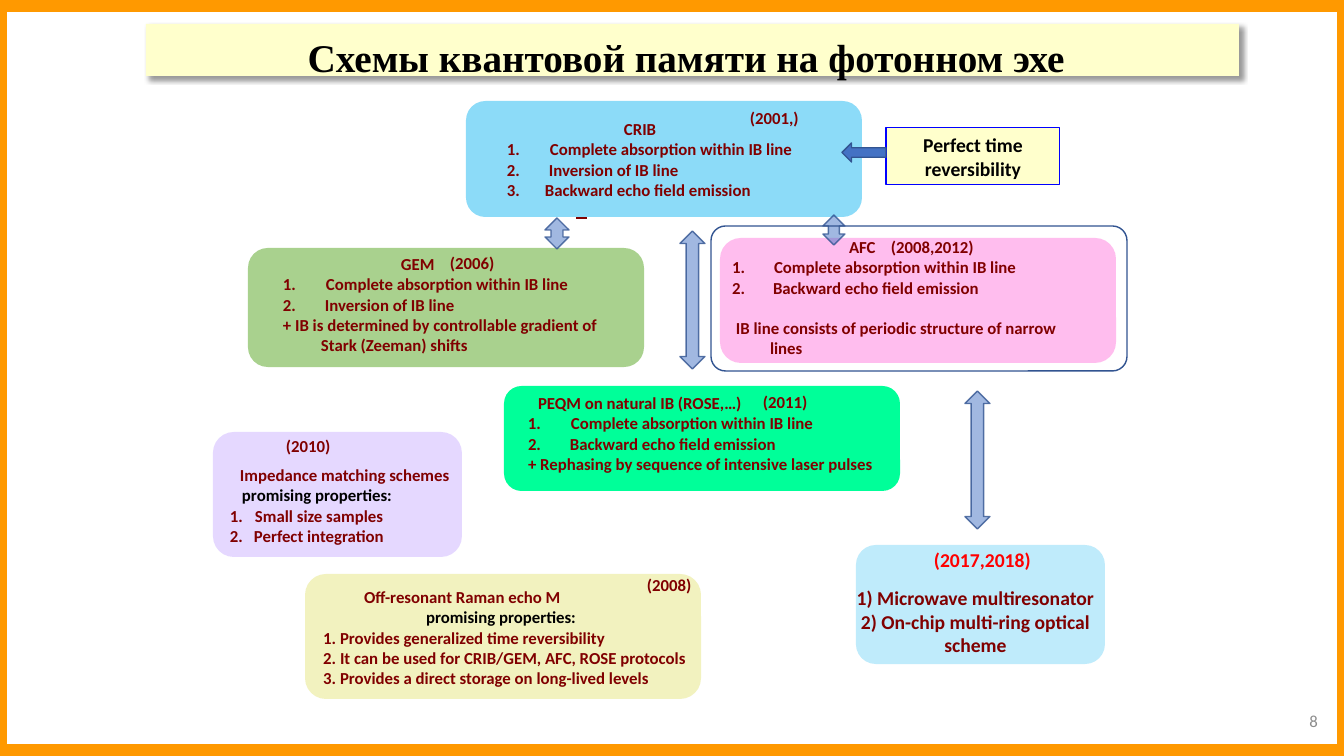
from dataclasses import dataclass

from lxml import etree
from pptx import Presentation
from pptx.dml.color import RGBColor
from pptx.enum.shapes import MSO_CONNECTOR, MSO_SHAPE
from pptx.enum.text import MSO_ANCHOR, PP_ALIGN
from pptx.oxml.ns import qn
from pptx.util import Pt

ROUND, RECT = MSO_SHAPE.ROUNDED_RECTANGLE, MSO_SHAPE.RECTANGLE
UP_DOWN, LEFT_ARROW = MSO_SHAPE.UP_DOWN_ARROW, MSO_SHAPE.LEFT_ARROW
TOP, MIDDLE = MSO_ANCHOR.TOP, MSO_ANCHOR.MIDDLE
LEFT, CENTER, RIGHT = PP_ALIGN.LEFT, PP_ALIGN.CENTER, PP_ALIGN.RIGHT
EMU_PER_PX = 914400 / 100.8


@dataclass(frozen=True)
class Theme:
    body_font: str = "Calibri"
    title_font: str = "Times New Roman"
    body: int = 12
    large: int = 14
    title: int = 28
    maroon: str = "800000"
    black: str = "000000"
    red: str = "FF0000"
    gray: str = "8C8C8C"
    cream: str = "FFFFCC"
    orange: str = "FF9900"
    blue: str = "4472C4"
    navy: str = "325491"
    bright_blue: str = "0000FF"


THEME = Theme()


@dataclass(frozen=True)
class Line:
    text: str
    left: int = 0             # where wrapped text starts, px from the box
    first: int | None = None  # where the first line or its number starts
    numbered: bool = False
    color: str = THEME.maroon
    size: int = THEME.body
    font: str = THEME.body_font
    bold: bool = True
    align: PP_ALIGN = LEFT
    gap: float = 0            # space before, points


def px(length):
    return round(length * EMU_PER_PX)


def apply(target, formats):
    for name, value in formats.items():
        setattr(target, name, value)


def paint(fill, color, opacity, holder):
    """Fill with a colour; holder is the XML element that carries the fill."""
    if color is None:
        fill.background()
        return
    fill.solid()
    fill.fore_color.rgb = RGBColor.from_string(color)
    if opacity < 100:
        swatch = holder.find(qn("a:solidFill")).find(qn("a:srgbClr"))
        etree.SubElement(swatch, qn("a:alpha"), val=str(opacity * 1000))


def add_shape(page, kind, box, fill=None, opacity=100, line=None, width=1, line_opacity=100):
    shape = page.shapes.add_shape(kind, *map(px, box))
    shape.shadow.inherit = False
    shape.line.width = Pt(width)
    properties = shape._element.spPr
    paint(shape.fill, fill, opacity, properties)
    paint(shape.line.fill, line, line_opacity, properties.find(qn("a:ln")))
    return shape


def write(shape, lines, anchor=TOP, inset=0):
    frame = shape.text_frame
    apply(frame, {"word_wrap": True, "vertical_anchor": anchor,
                  "margin_left": px(inset), "margin_right": px(inset),
                  "margin_top": px(inset), "margin_bottom": px(inset)})
    for index, line in enumerate(lines):
        para = frame.add_paragraph() if index else frame.paragraphs[0]
        apply(para, {"alignment": line.align, "space_before": Pt(line.gap)})
        first = line.left if line.first is None else line.first
        settings = para._p.get_or_add_pPr()
        settings.set("marL", str(px(line.left)))
        settings.set("indent", str(px(first - line.left)))
        if line.numbered:
            etree.SubElement(settings, qn("a:buAutoNum"), type="arabicPeriod")
        span = para.add_run()
        span.text = line.text
        apply(span.font, {"name": line.font, "size": Pt(line.size), "bold": line.bold})
        span.font.color.rgb = RGBColor.from_string(line.color)


def add_text(page, box, lines, **layout):
    write(page.shapes.add_textbox(*map(px, box)), lines, **layout)


def item(text, left, first):
    return Line(text, left, first, numbered=True)


def add_card(page, box, fill, opacity, year, year_at, lines, text_top, text_left=0, text_right=6):
    """Rounded card with its year and its list, both placed from the card's corner."""
    left, top, width, height = box
    add_shape(page, ROUND, box, fill, opacity)
    add_text(page, (left + text_left, top + text_top, width - text_left - text_right,
                    height - text_top), lines)
    add_text(page, (left + year_at[0], top + year_at[1], 120, 24), [year])


ABSORB = "Complete absorption within IB line"
BACKWARD = "Backward echo field emission"
PROMISE = "promising properties:"

CARDS = [
    dict(box=(466, 101, 396, 116), fill="00B0F0", opacity=45,
         year=Line("(2001,)"), year_at=(284, 7), text_top=18,
         lines=[Line("CRIB", 158), item(ABSORB, 84, 41),
                item("Inversion of IB line", 83, 41), item(BACKWARD, 79, 41)]),
    dict(box=(720, 238, 396, 125), fill="FF33CC", opacity=32,
         year=Line("(2008,2012)"), year_at=(171, -1), text_top=-1, text_right=28,
         lines=[Line("AFC", 129), item(ABSORB, 54, 12), item(BACKWARD, 53, 12),
                Line("IB line consists of periodic structure of narrow lines", 50, 16, gap=14.65)]),
    dict(box=(504, 386, 396, 105), fill="00FF99", opacity=100,
         year=Line("(2011)"), year_at=(259, 6), text_top=7,
         lines=[Line("PEQM on natural IB (ROSE,…)", 34), item(ABSORB, 67, 24),
                item(BACKWARD, 66, 24),
                Line("+ Rephasing by sequence of intensive laser pulses", 24)]),
    dict(box=(248, 248, 396, 119), fill="A9D18E", opacity=100,
         year=Line("(2006)"), year_at=(202, 5), text_top=6, text_right=28,
         lines=[Line("GEM", 153), item(ABSORB, 78, 35), item("Inversion of IB line", 77, 35),
                Line("+ IB is determined by controllable gradient of Stark (Zeeman) shifts", 73, 35)]),
    dict(box=(305, 574, 396, 125), fill="CCCC00", opacity=25,
         year=Line("(2008)"), year_at=(342, 1), text_top=13,
         lines=[Line("Off-resonant Raman echo M", 59), Line(PROMISE, 121, color=THEME.black),
                item("Provides generalized time reversibility", 35, 18),
                item("It can be used for CRIB/GEM, AFC, ROSE protocols", 35, 18),
                item("Provides a direct storage on long-lived levels", 35, 18)]),
    dict(box=(213, 432, 249, 125), fill="9966FF", opacity=25,
         year=Line("(2010)"), year_at=(73, 4), text_top=33,
         lines=[Line("Impedance matching schemes", 27), Line(PROMISE, 29, color=THEME.black),
                item("Small size samples", 42, 17), item("Perfect integration", 41, 17)]),
    dict(box=(856, 545, 249, 119), fill="00B0F0", opacity=25,
         year=Line("(2017,2018)", color=THEME.red, size=THEME.large), year_at=(78, 3),
         text_top=41, text_left=-15, text_right=-5,
         lines=[Line(text, size=THEME.large, align=CENTER) for text in (
             "1) Microwave multiresonator", "2) On-chip multi-ring optical scheme")]),
]

LINKS = [(545, 218, 24, 31), (823, 215, 22, 30), (680, 231, 25, 138), (965, 391, 25, 138)]


def add_links(page):
    for box in LINKS:
        add_shape(page, UP_DOWN, box, THEME.blue, 50, THEME.navy, line_opacity=80)
    # Short dash under the CRIB card
    dash = page.shapes.add_connector(MSO_CONNECTOR.STRAIGHT, px(576), px(218), px(587), px(218))
    dash.line.width = Pt(1)
    dash.line.color.rgb = RGBColor.from_string(THEME.maroon)
    etree.SubElement(dash._element.spPr, qn("a:effectLst"))


def add_callout(page, box):
    left, top, width, height = box
    note = add_shape(page, RECT, box, THEME.cream, line=THEME.bright_blue, width=0.75)
    write(note, [Line("Perfect time reversibility", color=THEME.black, size=THEME.large,
                      align=CENTER)], inset=5)
    add_shape(page, LEFT_ARROW, (left - 44, top + 15, 44, 19), THEME.blue, line=THEME.navy)


def add_title(page, box):
    left, top, width, height = box
    banner = add_shape(page, RECT, box, THEME.cream)
    effects = banner._element.spPr.find(qn("a:effectLst"))
    shadow = etree.SubElement(effects, qn("a:outerShdw"), blurRad=str(Pt(4)), dist=str(Pt(3)),
                              dir="2700000", algn="tl", rotWithShape="0")
    color = etree.SubElement(shadow, qn("a:srgbClr"), val=THEME.black)
    etree.SubElement(color, qn("a:alpha"), val="40000")
    add_text(page, (left + 46, top + 4, width - 105, height + 5),
             [Line("Схемы квантовой памяти на фотонном эхе", color=THEME.black,
                   size=THEME.title, font=THEME.title_font, align=CENTER)], inset=5)


def main():
    deck = Presentation()
    apply(deck, {"slide_width": px(1344), "slide_height": px(756)})
    page = deck.slides.add_slide(deck.slide_layouts[6])
    # Scheme cards and the arrows between them
    for card in CARDS:
        add_card(page, **card)
    add_links(page)
    # Frame around AFC
    frame = add_shape(page, ROUND, (711, 226, 416, 145), line=THEME.navy)
    frame.adjustments[0] = 0.1
    add_callout(page, (886, 128, 174, 57))
    # Border, title and page number
    add_shape(page, RECT, (0, 5, 1344, 746), line=THEME.orange, width=9.5)
    add_title(page, (146, 24, 1093, 52))
    add_text(page, (1026, 701, 292, 40),
             [Line("8", color=THEME.gray, bold=False, align=RIGHT)], anchor=MIDDLE)
    deck.save("out.pptx")


if __name__ == "__main__":
    main()
